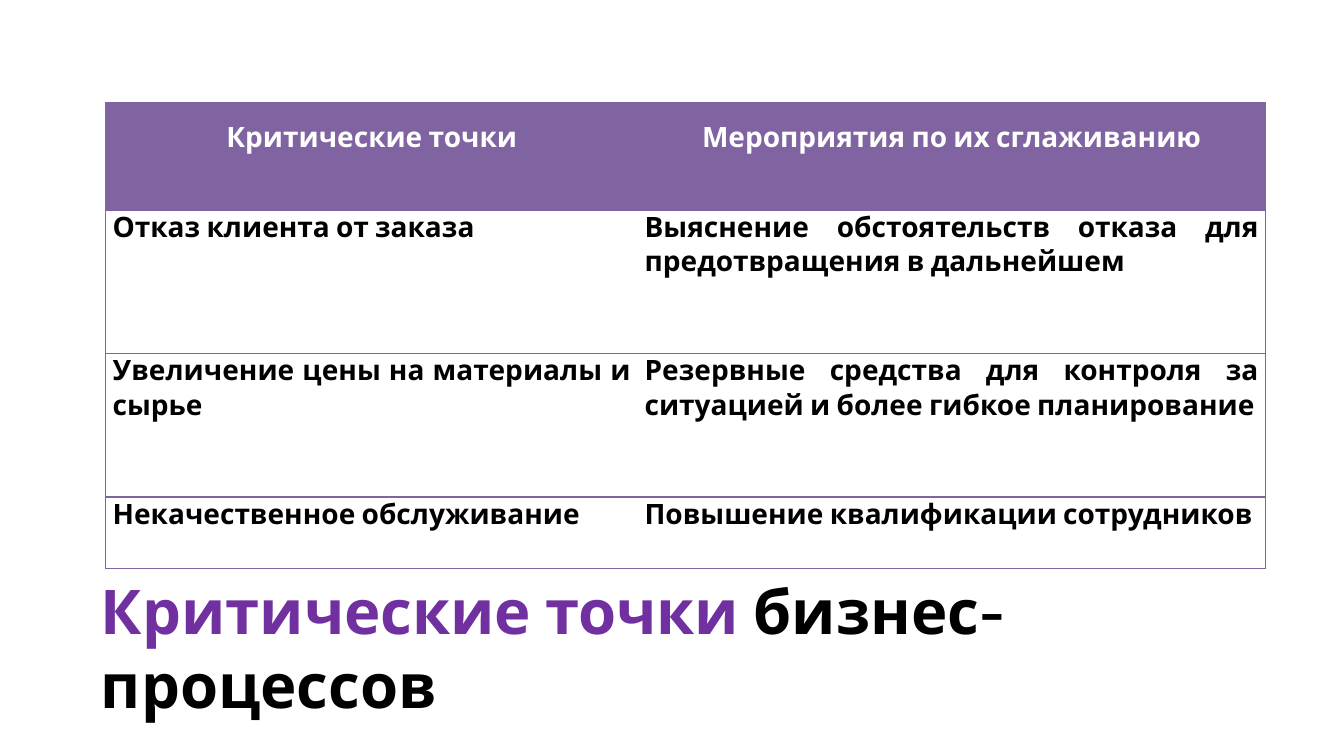
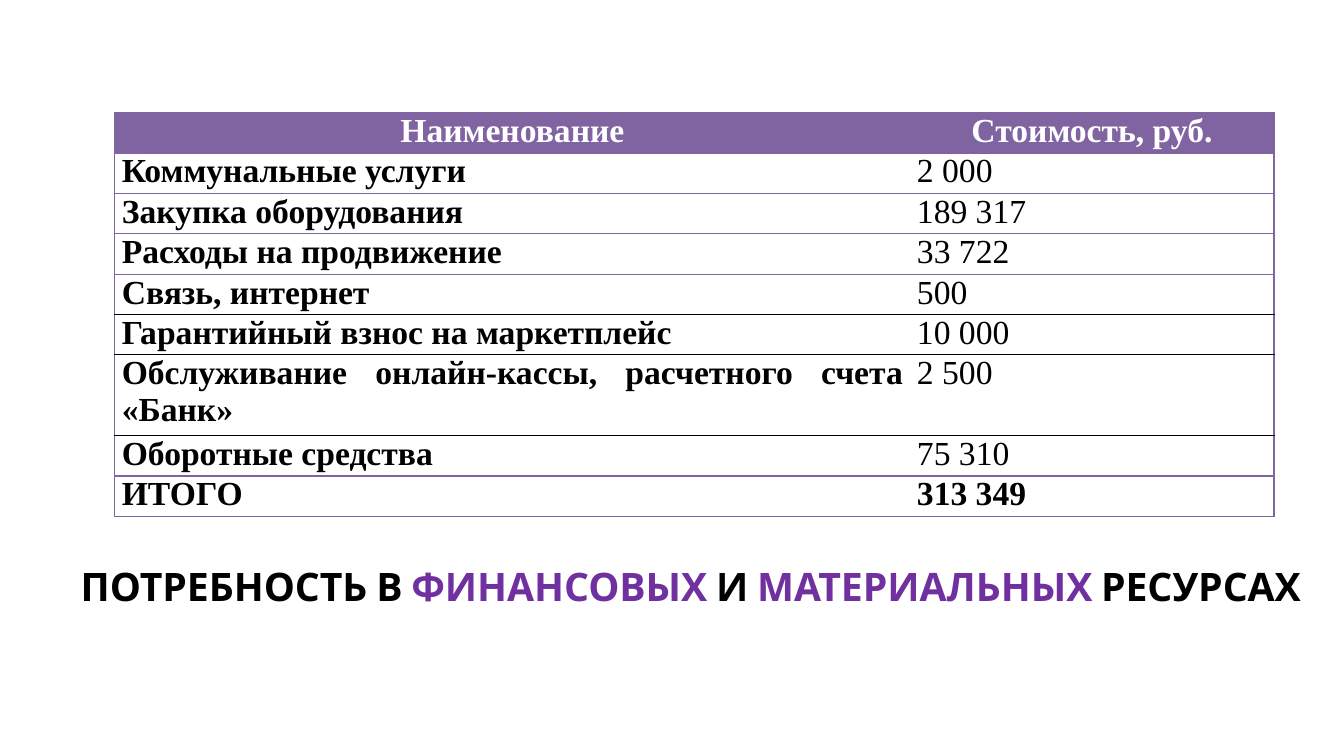
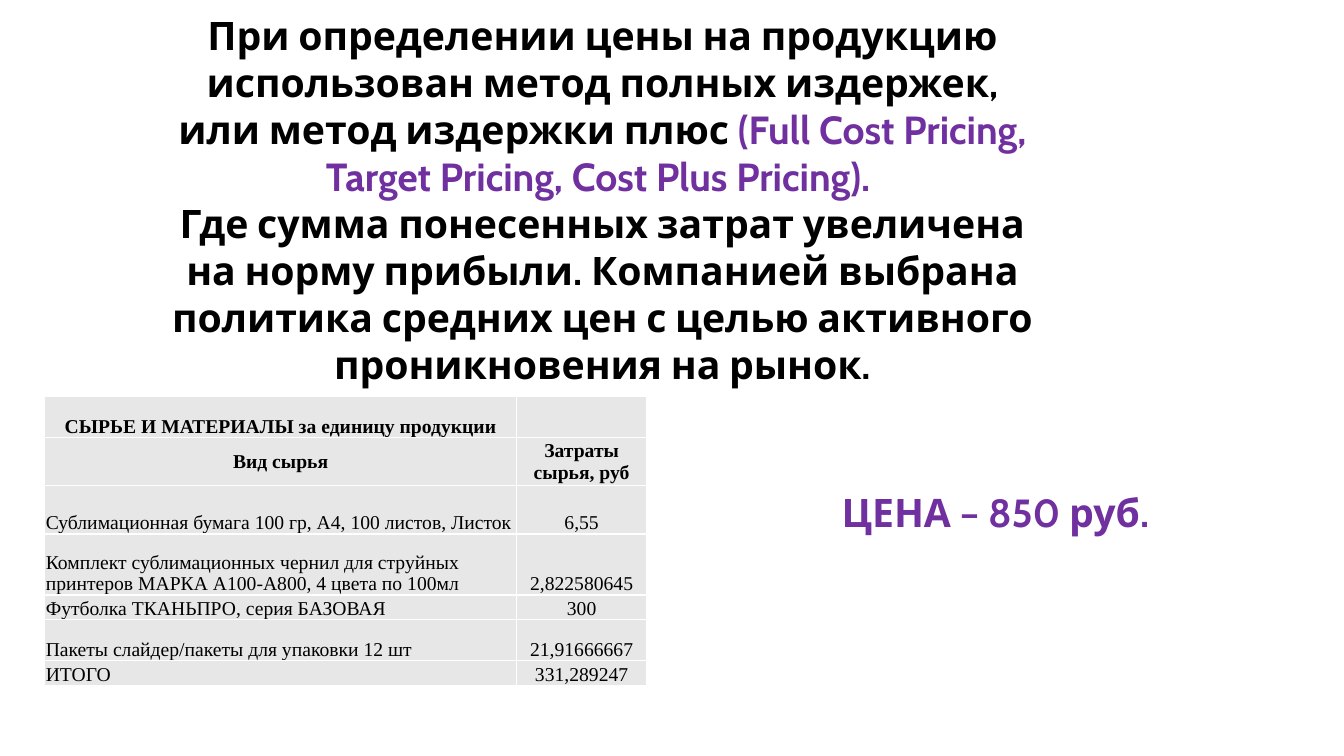
from lxml.etree import SubElement
from pptx import Presentation
from pptx.dml.color import RGBColor
from pptx.enum.text import MSO_ANCHOR as Anchor, MSO_AUTO_SIZE as AutoSize, PP_ALIGN as Align
from pptx.oxml.ns import qn
from pptx.util import Pt

COLORS = {
    "ink": "000000",
    "accent": "7030A0",
    "header": "8064A2",
    "paper": "FFFFFF",
    "cell": "E7E7E7",
}
TITLE_FONT = "Cabin"
TABLE_FONT = "Times New Roman"
PLAIN_TABLE = "{2D5ABB26-0587-4C30-8999-92F81FD0307C}"
THIN = ("header", 1)
THICK = ("header", 2.25)
BLACK = ("ink", 1)
WHITE = ("paper", 1)


class Deck:
    def __init__(self):
        self.prs = Presentation()
        self.prs.slide_width, self.prs.slide_height = Pt(960), Pt(540)
        self.slide = None

    def new_slide(self):
        self.slide = self.prs.slides.add_slide(self.prs.slide_layouts[6])

    def style(self, run, font, size, color, bold):
        run.font.name = font
        run.font.size = Pt(size)
        run.font.bold = bold
        run.font.color.rgb = RGBColor.from_string(COLORS[color])

    def heading(self, left, top, width, height, paragraphs, size=28, align=Align.LEFT):
        box = self.slide.shapes.add_textbox(Pt(left), Pt(top), Pt(width), Pt(height))
        frame = box.text_frame
        frame.word_wrap = True
        frame.auto_size = AutoSize.SHAPE_TO_FIT_TEXT
        for index, pieces in enumerate(paragraphs):
            paragraph = frame.add_paragraph() if index else frame.paragraphs[0]
            paragraph.alignment = align
            for words, color in pieces:
                run = paragraph.add_run()
                run.text = words
                self.style(run, TITLE_FONT, size, color, True)

    def table(self, left, top, widths, heights, across, down):
        grid = self.slide.shapes.add_table(
            len(heights), len(widths), Pt(left), Pt(top), Pt(sum(widths)), Pt(sum(heights))
        ).table
        grid.first_row = grid.horz_banding = False
        grid._tbl.tblPr.find(qn("a:tableStyleId")).text = PLAIN_TABLE
        for column, width in zip(grid.columns, widths):
            column.width = Pt(width)
        for r, height in enumerate(heights):
            grid.rows[r].height = Pt(height)
            for c in range(len(widths)):
                edges = {"L": down[c], "R": down[c + 1], "T": across[r], "B": across[r + 1]}
                self.borders(grid.cell(r, c), edges)
        return grid

    def borders(self, cell, edges):
        properties = cell._tc.get_or_add_tcPr()
        for side, edge in edges.items():
            if edge:
                color, width = edge
                line = SubElement(properties, qn(f"a:ln{side}"), w=str(int(Pt(width))))
                fill = SubElement(line, qn("a:solidFill"))
                SubElement(fill, qn("a:srgbClr"), val=COLORS[color])

    def cell(self, cell, words, font, size, color="ink", bold=True, align=Align.JUSTIFY,
             fill=None, anchor=Anchor.TOP, margins=(5, 0), spacing=None):
        if fill:
            cell.fill.solid()
            cell.fill.fore_color.rgb = RGBColor.from_string(COLORS[fill])
        else:
            cell.fill.background()
        cell.margin_left = cell.margin_right = Pt(margins[0])
        cell.margin_top, cell.margin_bottom = Pt(margins[1]), 0
        cell.vertical_anchor = anchor
        if words:
            paragraph = cell.text_frame.paragraphs[0]
            paragraph.text = words
            paragraph.alignment = align
            if spacing:
                paragraph.line_spacing = spacing
            self.style(paragraph.runs[0], font, size, color, bold)

    def header_cell(self, cell, words, font, size, spacing=None):
        self.cell(cell, words, font, size, color="paper", align=Align.CENTER,
                  fill="header", spacing=spacing)


def critical_points(deck):
    deck.new_slide()
    rows = [
        ("Критические точки", "Мероприятия по их сглаживанию"),
        ("Отказ клиента от заказа",
         "Выяснение обстоятельств отказа для предотвращения в дальнейшем"),
        ("Увеличение цены на материалы и сырье",
         "Резервные средства для контроля за ситуацией и более гибкое планирование"),
        ("Некачественное обслуживание", "Повышение квалификации сотрудников"),
    ]
    points = deck.table(75.5, 73.5, [380, 448.5], [77, 102.25, 102.25, 51.25],
                        [THIN, THIN, THIN, THICK, THIN], [THIN, None, THIN])
    for r, row in enumerate(rows):
        for c, words in enumerate(row):
            if r == 0:
                deck.header_cell(points.cell(r, c), words, TITLE_FONT, 20, spacing=1.5)
            else:
                deck.cell(points.cell(r, c), words, TITLE_FONT, 20)
    deck.heading(65, 406, 855, 60.5,
                 [[("Критические точки ", "accent"), ("бизнес-процессов", "ink")]], size=44)


def resources(deck):
    deck.new_slide()
    deck.heading(50.5, 398, 1057, 41, [[
        ("ПОТРЕБНОСТЬ В ", "ink"),
        ("ФИНАНСОВЫХ ", "accent"),
        ("И", "ink"),
        (" МАТЕРИАЛЬНЫХ ", "accent"),
        ("РЕСУРСАХ", "ink"),
    ]])
    rows = [
        ("Наименование", "Стоимость, руб."),
        ("Коммунальные услуги", "2 000"),
        ("Закупка оборудования", "189 317"),
        ("Расходы на продвижение", "33 722"),
        ("Связь, интернет", "500"),
        ("Гарантийный взнос на маркетплейс", "10 000"),
        ("Обслуживание онлайн-кассы, расчетного счета «Банк»", "2 500"),
        ("Оборотные средства", "75 310"),
        ("ИТОГО", "313 349"),
    ]
    line = 28.85
    costs = deck.table(82, 80.5, [568, 260], [line] * 6 + [2 * line] + [line] * 2,
                       [THIN] * 5 + [BLACK] * 3 + [THIN] * 2, [THIN, None, THIN])
    for r, row in enumerate(rows):
        for c, words in enumerate(row):
            if r == 0:
                deck.header_cell(costs.cell(r, c), words, TABLE_FONT, 24)
            else:
                bold = c == 0 or r == len(rows) - 1
                deck.cell(costs.cell(r, c), words, TABLE_FONT, 24, bold=bold)


def pricing(deck):
    deck.new_slide()
    deck.heading(108.5, 4.5, 643.5, 278.5, [
        [("При определении цены на продукцию использован метод полных издержек, "
          "или метод издержки плюс ", "ink"),
         ("(Full Cost Pricing, Target Pricing, Cost Plus Pricing). ", "accent")],
        [("Где сумма понесенных затрат увеличена на норму прибыли. Компанией выбрана "
          "политика средних цен с целью активного проникновения на рынок.", "ink")],
    ], align=Align.CENTER)
    rows = [
        ("СЫРЬЕ И МАТЕРИАЛЫ за единицу продукции", ""),
        ("Вид сырья", "Затраты сырья, руб"),
        ("Сублимационная бумага 100 гр, А4, 100 листов, Листок", "6,55"),
        ("Комплект сублимационных чернил для струйных принтеров МАРКА А100-А800, "
         "4 цвета по 100мл", "2,822580645"),
        ("Футболка ТКАНЬПРО, серия БАЗОВАЯ", "300"),
        ("Пакеты слайдер/пакеты для упаковки 12 шт", "21,91666667"),
        ("ИТОГО", "331,289247"),
    ]
    materials = deck.table(32, 283.5, [337, 93], [29, 34.5, 34.5, 43.5, 17.25, 29.5, 17.25],
                           [WHITE] * 8, [WHITE] * 3)
    for r, row in enumerate(rows):
        for c, words in enumerate(row):
            heading = r < 2
            deck.cell(materials.cell(r, c), words, TABLE_FONT, 14, bold=heading,
                      align=Align.CENTER if heading or c else Align.LEFT, fill="cell",
                      anchor=Anchor.MIDDLE if r == 1 else Anchor.BOTTOM, margins=(0.7, 0.7))
    deck.heading(537, 345.5, 348, 41, [[("ЦЕНА – 850 руб.", "accent")]], align=Align.CENTER)


def main():
    deck = Deck()
    critical_points(deck)
    resources(deck)
    pricing(deck)
    deck.prs.save("out.pptx")


if __name__ == "__main__":
    main()
